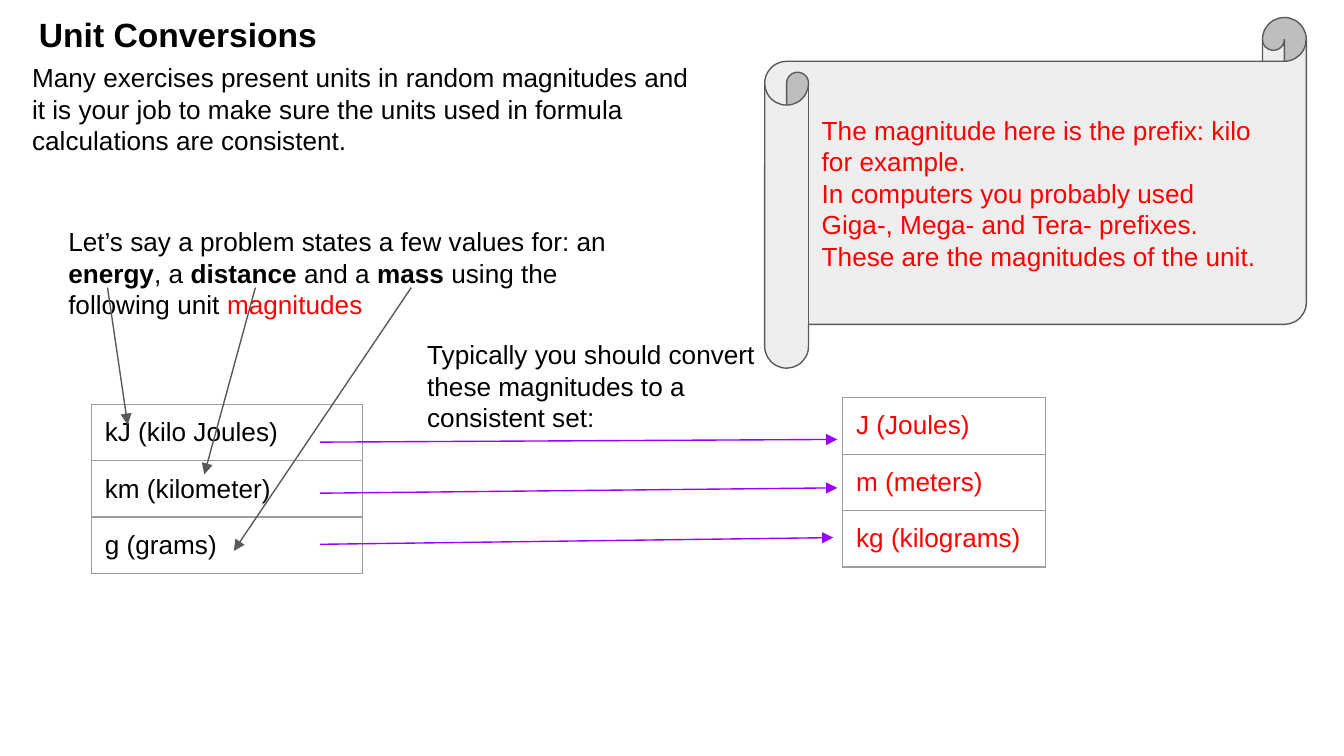
from lxml.etree import SubElement
from pptx import Presentation
from pptx.dml.color import RGBColor
from pptx.enum.shapes import MSO_CONNECTOR as Connector, MSO_SHAPE as Shape
from pptx.enum.text import MSO_ANCHOR as Anchor, MSO_AUTO_SIZE as AutoSize, PP_ALIGN as Align
from pptx.oxml.ns import qn
from pptx.util import Inches, Pt

SLIDE_WIDTH = Inches(10)
SLIDE_HEIGHT = SLIDE_WIDTH * 9 // 16
COLORS = {
    "text": "000000", "accent": "FF0000", "pointer": "595959",
    "conversion": "9900FF", "border": "9E9E9E", "scroll": "EEEEEE",
}
MARGINS = {f"margin_{side}": Inches(0.1) for side in ("left", "top", "right", "bottom")}
FRAME = {**MARGINS, "word_wrap": True, "auto_size": AutoSize.NONE}


def rgb(name):
    return RGBColor.from_string(COLORS[name])


def set_all(target, values):
    for name, value in values.items():
        setattr(target, name, value)


def inches(box):
    return [Inches(length) for length in box]


def write(frame, paragraphs, color="text", size=14):
    """Fill a frame; each paragraph is a list of (text, bold, color or None)."""
    for index, runs in enumerate(paragraphs):
        paragraph = frame.paragraphs[0] if index == 0 else frame.add_paragraph()
        paragraph.alignment = Align.LEFT
        for text, bold, own_color in runs:
            run = paragraph.add_run()
            run.text = text
            set_all(run.font, {"name": "Arial", "size": Pt(size), "bold": bold})
            run.font.color.rgb = rgb(own_color or color)


def plain(*texts):
    return [[(text, False, None)] for text in texts]


def add_title(slide, box, text):
    title = slide.shapes.title
    set_all(title, dict(zip(("left", "top", "width", "height"), inches(box))))
    set_all(title.text_frame, {**FRAME, "vertical_anchor": Anchor.TOP})
    write(title.text_frame, [[(text, True, None)]], size=18)


def add_text(slide, box, paragraphs):
    frame = slide.shapes.add_textbox(*inches(box)).text_frame
    set_all(frame, FRAME)
    write(frame, paragraphs)


def add_cell_borders(cell):
    properties = cell._tc.get_or_add_tcPr()
    for position, side in enumerate(("lnL", "lnR", "lnT", "lnB")):
        line = SubElement(properties, qn(f"a:{side}"), w=str(Pt(0.75)))
        fill = SubElement(line, qn("a:solidFill"))
        SubElement(fill, qn("a:srgbClr"), val=COLORS["border"])
        properties.insert(position, line)


def add_units(slide, box, units, color):
    """A one-column table of units, with rows of equal height."""
    table = slide.shapes.add_table(len(units), 1, *inches(box)).table
    set_all(table, {"first_row": False, "horz_banding": False})
    for cell, unit in zip(table.iter_cells(), units):
        set_all(cell, MARGINS)
        cell.fill.background()
        add_cell_borders(cell)
        write(cell.text_frame, plain(unit), color)


def add_arrow(slide, start, end, color):
    arrow = slide.shapes.add_connector(Connector.STRAIGHT, *inches(start + end))
    arrow.line.color.rgb = rgb(color)
    arrow.line.width = Pt(0.75)
    SubElement(arrow.line._get_or_add_ln(), qn("a:tailEnd"), type="triangle")
    SubElement(arrow._element.spPr, qn("a:effectLst"))


def add_scroll(slide, box, paragraphs):
    scroll = slide.shapes.add_shape(Shape.HORIZONTAL_SCROLL, *inches(box))
    scroll.shadow.inherit = False
    scroll.fill.solid()
    scroll.fill.fore_color.rgb = rgb("scroll")
    scroll.line.color.rgb = rgb("pointer")
    scroll.line.width = Pt(0.75)
    set_all(scroll.text_frame, {**FRAME, "vertical_anchor": Anchor.MIDDLE})
    write(scroll.text_frame, paragraphs, "accent")


def add_conversion(slide, left, top):
    """Given units on the left, consistent units on the right, arrows between."""
    add_units(slide, (left, top + 0.05, 2.02, 1.24),
              ("kJ (kilo Joules)", "km (kilometer)", "g (grams)"), "text")
    add_units(slide, (left + 5.59, top, 1.51, 1.26),
              ("J (Joules)", "m (meters)", "kg (kilograms)"), "accent")
    for row, (end_x, end_y) in enumerate(((5.55, 0.31), (5.55, 0.67), (5.52, 1.04))):
        add_arrow(slide, (left + 1.7, top + 0.33 + row * 0.38),
                  (left + end_x, top + end_y), "conversion")
    add_text(slide, (left + 2.4, top - 0.54, 2.68, 0.32),
             plain("Typically you should convert these magnitudes to a consistent set:"))


def add_problem(slide, left, top):
    """The example sentence, with an arrow from each quantity to its unit."""
    add_text(slide, (left, top, 4.3, 0.79), [[
        ("Let’s say a problem states a few values for: an ", False, None),
        ("energy", True, None), (", a ", False, None),
        ("distance ", True, None), ("and a ", False, None),
        ("mass ", True, None), ("using the following unit ", False, None),
        ("magnitudes", False, "accent"),
    ]])
    for start_x, end_x, end_y in ((0.39, 0.54, 1.58), (1.49, 1.11, 1.95), (2.65, 1.33, 2.52)):
        add_arrow(slide, (left + start_x, top + 0.56), (left + end_x, top + end_y), "pointer")


def main():
    deck = Presentation()
    set_all(deck, {"slide_width": SLIDE_WIDTH, "slide_height": SLIDE_HEIGHT})
    slide = deck.slides.add_slide(deck.slide_layouts.get_by_name("Title Only"))
    add_title(slide, (0.19, 0, 3.94, 0.42), "Unit Conversions")
    add_text(slide, (0.14, 0.36, 5.22, 0.79), plain(
        "Many exercises present units in random magnitudes and it is your job "
        "to make sure the units used in formula calculations are consistent."))
    add_conversion(slide, 0.68, 2.96)
    add_problem(slide, 0.41, 1.58)
    add_scroll(slide, (5.69, 0.13, 4.03, 2.61), plain(
        "The magnitude here is the prefix: kilo for example.",
        "In computers you probably used Giga-, Mega- and Tera- prefixes. "
        "These are the magnitudes of the unit."))
    deck.save("out.pptx")


if __name__ == "__main__":
    main()
